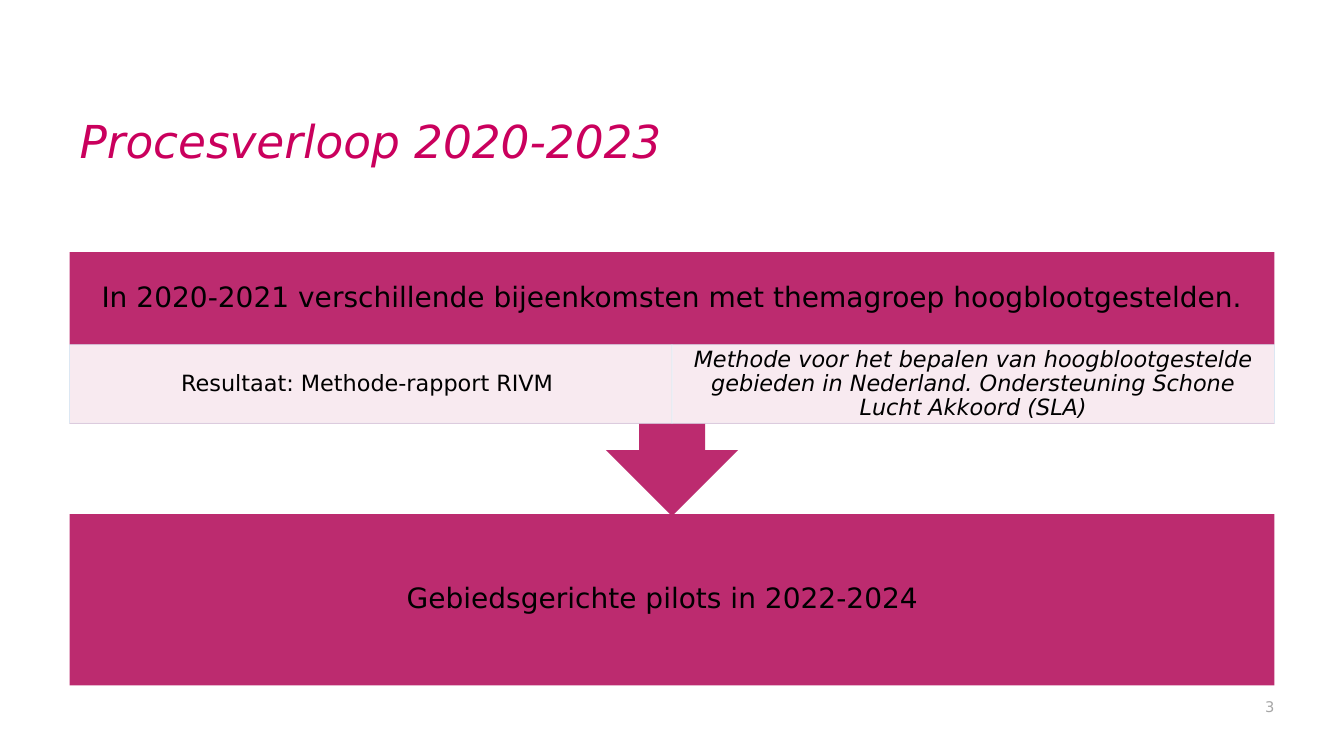
from lxml import etree
from pptx import Presentation
from pptx.dml.color import RGBColor
from pptx.enum import shapes, text
from pptx.oxml.ns import qn
from pptx.util import Inches, Pt

TITLE = "Procesverloop 2020-2023"
MEETINGS = "In 2020-2021 verschillende bijeenkomsten met themagroep hoogblootgestelden."
RESULTS = [
    {"words": "Resultaat: Methode-rapport RIVM", "italic": False, "insets": (0.12, 0.02, 0.19, 0.02)},
    {"words": "Methode voor het bepalen van hoogblootgestelde gebieden in Nederland. "
              "Ondersteuning Schone Lucht Akkoord (SLA)",
     "italic": True, "insets": (0.12, 0.02, 0.12, 0.02)},
]
PILOTS = "Gebiedsgerichte pilots in 2022-2024"
PAGE = "3"

THEME = {
    "font": "DejaVu Sans",
    "title": "CA005D", "step": "BC2B6F", "panel": "FFFFFF", "edge": "DBEBF6",
    "ink": "000000", "page": "A6A6A6",
    "title_size": 32.4, "step_size": 20, "result_size": 16, "page_size": 10.5,
    "opacity": 90,
}
LEFT, WIDTH = 0.69, 11.95
STEP_TOP, STEP_HEIGHT, HEADING_HEIGHT = 2.5, 2.62, 0.92
RESULT_HEIGHT = 0.78
PILOT_TOP, PILOT_HEIGHT = 5.1, 1.7

deck = Presentation()
deck.slide_width, deck.slide_height = Inches(13.33), Inches(7.5)
slide = deck.slides.add_slide(deck.slide_layouts[6])


def colour(name):
    return RGBColor.from_string(THEME[name])


def write(holder, words, size, ink="ink", italic=False, align=text.PP_ALIGN.CENTER,
          anchor=text.MSO_ANCHOR.MIDDLE, insets=(0.16, 0.16, 0.16, 0.16)):
    frame = holder.text_frame
    frame.word_wrap = True
    frame.vertical_anchor = anchor
    (frame.margin_left, frame.margin_top,
     frame.margin_right, frame.margin_bottom) = map(Inches, insets)
    line = frame.paragraphs[0]
    line.text = words
    line.alignment = align
    line.line_spacing = 0.9
    line.font.name, line.font.size = THEME["font"], Pt(THEME[size])
    line.font.italic = italic
    line.font.color.rgb = colour(ink)


def text_box(left, top, width, height):
    return slide.shapes.add_textbox(*map(Inches, (left, top, width, height)))


def block(kind, left, top, width, height, fill):
    shape = slide.shapes.add_shape(kind, *map(Inches, (left, top, width, height)))
    shape.shadow.inherit = False
    shape.fill.solid()
    shape.fill.fore_color.rgb = colour(fill)
    shape.line.fill.background()
    return shape


def soften(shape):
    for tint in shape.fill._xPr.iter(qn("a:srgbClr")):
        etree.SubElement(tint, qn("a:alpha"), val=str(THEME["opacity"] * 1000))


write(text_box(LEFT, 1.15, WIDTH, 1.04), TITLE, "title_size", "title", True,
      text.PP_ALIGN.LEFT, text.MSO_ANCHOR.BOTTOM, (0.1, 0.05, 0.1, 0.52))
write(text_box(7.17, 6.8, 5.47, 0.35), PAGE, "page_size", "page", False,
      text.PP_ALIGN.RIGHT, text.MSO_ANCHOR.BOTTOM, (0.1, 0.05, 0, 0.05))

pilots = block(shapes.MSO_SHAPE.RECTANGLE, LEFT, PILOT_TOP, WIDTH, PILOT_HEIGHT, "step")
write(pilots, PILOTS, "step_size", insets=(0.16, 0.16, 0.35, 0.16))

meetings = block(shapes.MSO_SHAPE.UP_ARROW_CALLOUT, LEFT, STEP_TOP, WIDTH, STEP_HEIGHT, "step")
meetings.rotation = 180
write(text_box(LEFT, STEP_TOP, WIDTH, HEADING_HEIGHT), MEETINGS, "step_size")

result_width = WIDTH / len(RESULTS)
for column, result in enumerate(RESULTS):
    panel = block(shapes.MSO_SHAPE.RECTANGLE, LEFT + column * result_width,
                  STEP_TOP + HEADING_HEIGHT, result_width, RESULT_HEIGHT, "panel")
    panel.line.color.rgb = colour("edge")
    panel.line.width = Pt(0.5)
    soften(panel)
    write(panel, result["words"], "result_size", italic=result["italic"], insets=result["insets"])

deck.save("out.pptx")
